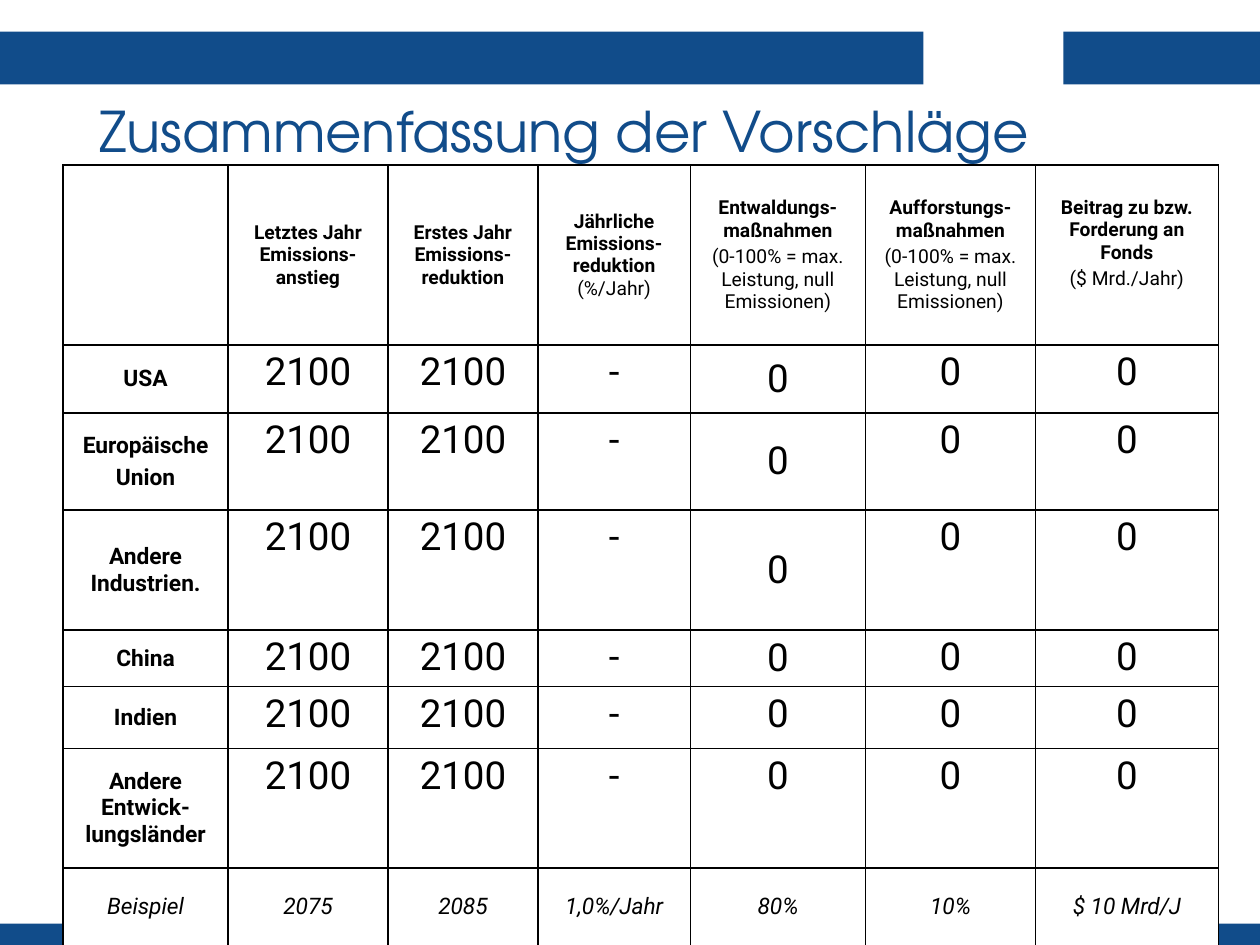
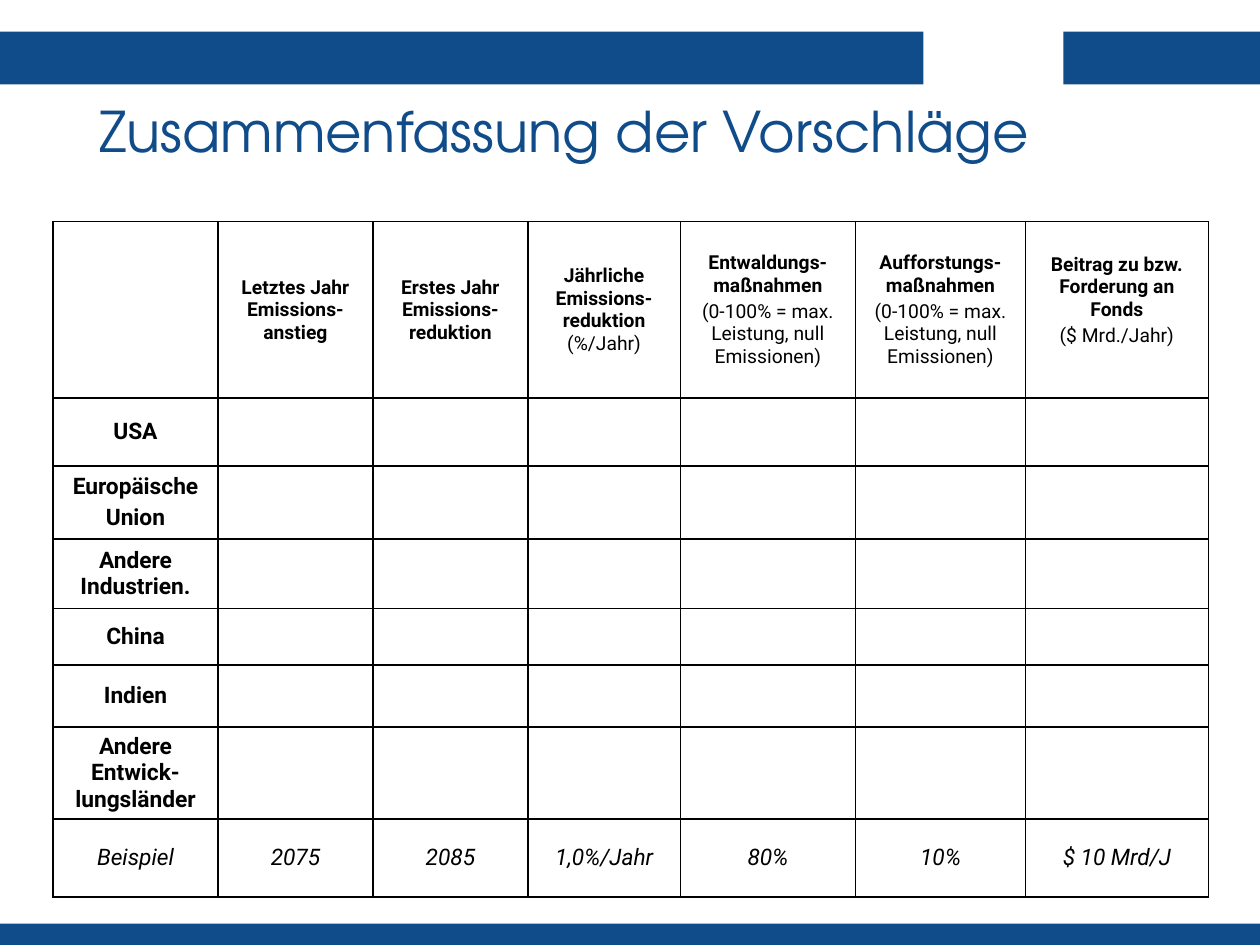
from dataclasses import dataclass

from lxml import etree
from pptx import Presentation
from pptx import util as u
from pptx.dml.color import RGBColor
from pptx.enum import shapes, text
from pptx.oxml import ns

INK = {"blue": "114C8A", "black": "000000", "white": "FFFFFF"}
FONT = {"head": "TeX Gyre Adventor", "body": "Roboto"}
TITLE = "Zusammenfassung der Vorschläge"


@dataclass
class Box:
    left: float
    top: float
    width: float
    height: float

    def lengths(self) -> list:
        return [u.Inches(v) for v in (self.left, self.top, self.width, self.height)]


@dataclass
class Style:
    size: float
    bold: bool = False
    italic: bool = False
    middle: bool = True
    top: float = 0.04


@dataclass
class Grid:
    left: float
    top: float
    cols: list[float]
    rows: list[float]
    values: list[str]


# Shared look
BANDS = [Box(0, 0.25, 7.33, 0.42), Box(8.44, 0.25, 1.56, 0.42), Box(0, 7.33, 10, 0.17)]
HEAD_BOX = Box(0.69, 0.73, 8.62, 0.68)
HEAD = Style(11, bold=True)
FUND = Style(11, bold=True, middle=False, top=0.25)
LABEL = Style(13, bold=True)
SAMPLE = Style(13, italic=True)

# Shared wording: \n parts paragraphs, \v breaks a line
SCALE = "(0-100% = max. Leistung, null Emissionen)"
HEADS = [
    "",
    "Letztes Jahr Emissions-anstieg",
    "Erstes Jahr Emissions-reduktion",
    "Jährliche Emissions- reduktion\v(%/Jahr)",
    f"Entwaldungs-maßnahmen\n{SCALE}",
    f"Aufforstungs-maßnahmen\n{SCALE}",
    "Beitrag zu bzw. Forderung an Fonds\n($ Mrd./Jahr)",
]
REGIONS = ["USA", "Europäische\nUnion", "Andere Industrien.", "China", "Indien",
           "Andere Entwick-lungsländer"]
EXAMPLE = ["Beispiel", "2075", "2085", "1,0%/Jahr", "80%", "10%", "$ 10 Mrd/J"]
FOREST = 4   # column of the deforestation measures
CHINA = 4    # last row whose forest value sits in the middle

GRIDS = [
    Grid(0.5, 1.31, [1.31, 1.27, 1.19, 1.21, 1.39, 1.35, 1.45],
         [1.43, 0.54, 0.77, 0.95, 0.45, 0.49, 0.95, 0.62],
         ["2100", "2100", "-", "0", "0", "0"]),
    Grid(0.42, 1.76, [1.31, 1.23, 1.23, 1.21, 1.39, 1.35, 1.45],
         [1.4, 0.54, 0.58, 0.55, 0.45, 0.49, 0.73, 0.62],
         [""] * 6),
]


def tint(name: str) -> RGBColor:
    return RGBColor.from_string(INK[name])


def add_bands(slide) -> None:
    for box in BANDS:
        band = slide.shapes.add_shape(shapes.MSO_SHAPE.RECTANGLE, *box.lengths())
        band.shadow.inherit = False
        band.fill.solid()
        band.fill.fore_color.rgb = tint("blue")
        band.line.fill.background()


def set_title(slide) -> None:
    title = slide.shapes.title
    title.left, title.top, title.width, title.height = HEAD_BOX.lengths()
    frame = title.text_frame
    frame.text = TITLE
    frame.auto_size = text.MSO_AUTO_SIZE.NONE
    frame.vertical_anchor = text.MSO_ANCHOR.MIDDLE
    para = frame.paragraphs[0]
    para.alignment = text.PP_ALIGN.LEFT
    para.line_spacing = 0.9
    font = para.runs[0].font
    font.name, font.size = FONT["head"], u.Pt(32)
    font.color.rgb = tint("blue")
    # The title lies in front of the table
    title.element.getparent().append(title.element)


def add_edges(cell) -> None:
    props = cell._tc.get_or_add_tcPr()
    for side in ("a:lnL", "a:lnR", "a:lnT", "a:lnB"):
        line = etree.SubElement(props, ns.qn(side), w=str(u.Pt(1)))
        fill = etree.SubElement(line, ns.qn("a:solidFill"))
        etree.SubElement(fill, ns.qn("a:srgbClr"), val=INK["black"])


def fill_cell(cell, words: str, style: Style) -> None:
    add_edges(cell)
    cell.fill.solid()
    cell.fill.fore_color.rgb = tint("white")
    if not words:
        return
    cell.margin_left = cell.margin_right = u.Inches(0.08)
    cell.margin_top, cell.margin_bottom = u.Inches(style.top), u.Inches(0.04)
    anchor = text.MSO_ANCHOR
    cell.vertical_anchor = anchor.MIDDLE if style.middle else anchor.TOP
    cell.text_frame.text = words
    for i, para in enumerate(cell.text_frame.paragraphs):
        para.alignment = text.PP_ALIGN.CENTER
        if i:
            para.space_before = u.Pt(0.2 * style.size)
        for run in para.runs:
            font = run.font
            font.name, font.size = FONT["body"], u.Pt(style.size)
            font.bold = style.bold and not run.text.startswith("(")
            font.italic = style.italic
            font.color.rgb = tint("black")


def pick_style(row: int, col: int) -> Style:
    if row == 0:
        return FUND if col == len(HEADS) - 1 else HEAD
    if row > len(REGIONS):
        return SAMPLE
    if col == 0:
        return LABEL
    return Style(22, middle=col == FOREST and row <= CHINA)


def add_grid(slide, grid: Grid) -> None:
    box = Box(grid.left, grid.top, sum(grid.cols), sum(grid.rows))
    frame = slide.shapes.add_table(len(grid.rows), len(grid.cols), *box.lengths())
    table = frame.table
    table.first_row = table.horz_banding = False
    for col, width in zip(table.columns, grid.cols):
        col.width = u.Inches(width)
    for row, height in zip(table.rows, grid.rows):
        row.height = u.Inches(height)
    lines = [HEADS, *([name, *grid.values] for name in REGIONS), EXAMPLE]
    for r, line in enumerate(lines):
        for c, words in enumerate(line):
            fill_cell(table.cell(r, c), words, pick_style(r, c))


def main() -> None:
    deck = Presentation()
    deck.slide_width, deck.slide_height = u.Inches(10), u.Inches(7.5)
    for grid in GRIDS:
        slide = deck.slides.add_slide(deck.slide_layouts[5])
        add_bands(slide)
        add_grid(slide, grid)
        set_title(slide)
    deck.save("out.pptx")


if __name__ == "__main__":
    main()
